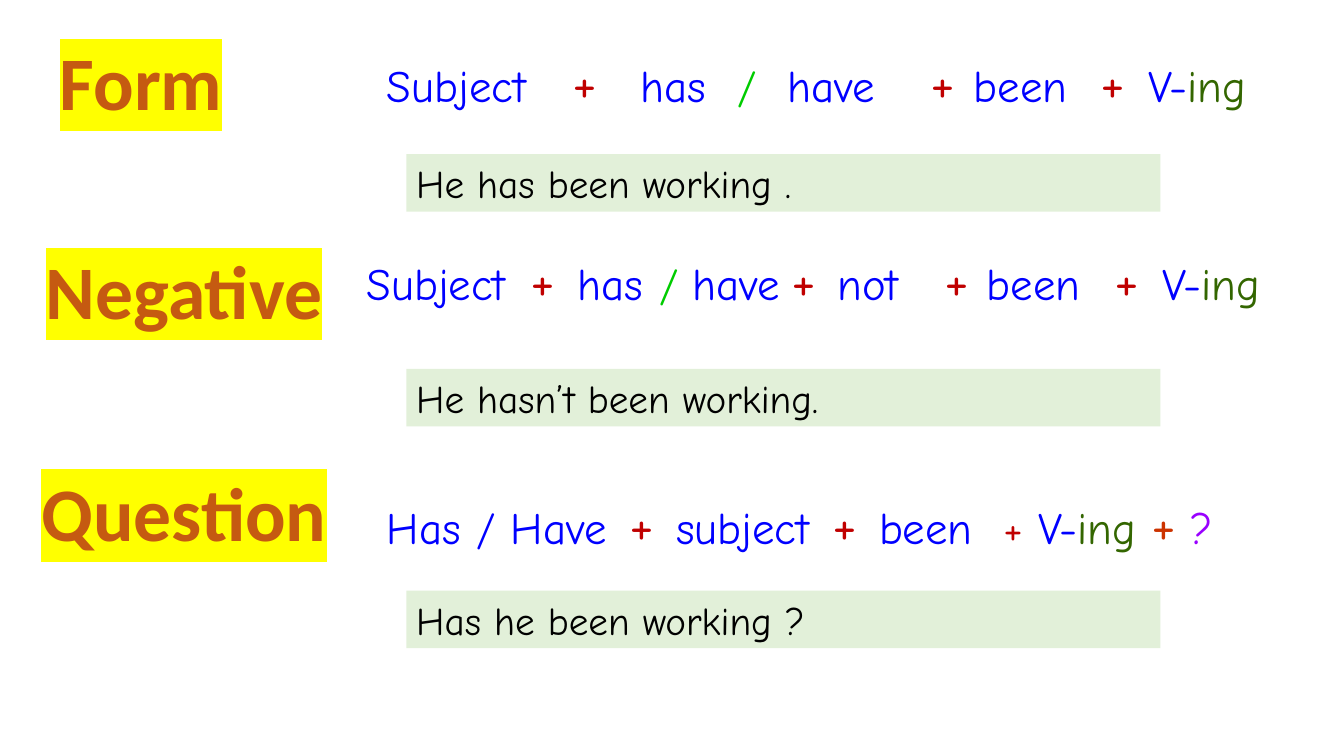
from lxml import etree
from pptx import Presentation
from pptx.dml.color import RGBColor
from pptx.enum.shapes import MSO_SHAPE
from pptx.enum.text import MSO_ANCHOR, MSO_AUTO_SIZE, PP_ALIGN
from pptx.oxml.ns import qn
from pptx.util import Inches, Pt

RECTANGLE = MSO_SHAPE.RECTANGLE
MIDDLE = MSO_ANCHOR.MIDDLE
FIT_SHAPE = MSO_AUTO_SIZE.SHAPE_TO_FIT_TEXT
LEFT, CENTER = PP_ALIGN.LEFT, PP_ALIGN.CENTER

BLUE = RGBColor(0x00, 0x00, 0xFF)
RED = RGBColor(0xC0, 0x00, 0x00)
BRICK = RGBColor(0xCC, 0x33, 0x00)
LIME = RGBColor(0x00, 0xCC, 0x00)
GREEN = RGBColor(0x33, 0x66, 0x00)
PURPLE = RGBColor(0x99, 0x00, 0xFF)
ORANGE = RGBColor(0xC5, 0x5A, 0x11)
PALE_GREEN = RGBColor(0xE2, 0xF0, 0xD9)
BLACK = RGBColor(0x00, 0x00, 0x00)
YELLOW = RGBColor(0xFF, 0xFF, 0x00)
WHITE = RGBColor(0xFF, 0xFF, 0xFF)

HEADING_FONT, BODY_FONT = "Calibri", "Comic Neue"
TEXT_INSET = 0.1

# Formula parts: (text, colour, size)
PLUS = ("+", RED, 40)
SMALL_PLUS = ("+", RED, 32)
LAST_PLUS = ("+", BRICK, 40)
SLASH = ("/", LIME, 32)
MARK = ("?", PURPLE, 32)
VERB = ("V-", BLUE, 32)
ENDING = ("ing", GREEN, 32)


def word(text):
    return (text, BLUE, 32)


# Each formula: box (left, top, width), then (slide position, part)
FORM = ((3.65, 0.41, 9.46), [
    (3.84, word("Subject")), (5.68, PLUS), (6.35, word("has")),
    (7.32, SLASH), (7.81, word("have")), (9.23, PLUS),
    (9.66, word("been")), (10.92, PLUS), (11.39, VERB)])
NEGATIVE = ((3.46, 2.38, 9.66), [
    (3.64, word("Subject")), (5.26, PLUS), (5.73, word("has")),
    (6.54, SLASH), (6.87, word("have")), (7.85, PLUS),
    (8.31, word("not")), (9.37, PLUS), (9.79, word("been")),
    (11.06, PLUS), (11.53, VERB)])
QUESTION = ((3.65, 4.8, 9.16), [
    (3.84, word("Has / Have")), (6.25, PLUS), (6.71, word("subject")),
    (8.26, PLUS), (8.72, word("been")), (9.95, SMALL_PLUS),
    (10.3, VERB), (11.42, LAST_PLUS), (11.81, MARK)])


def add_text_box(page, left, top, width, height):
    box = page.shapes.add_textbox(
        Inches(left), Inches(top), Inches(width), Inches(height))
    box.text_frame.word_wrap = True
    box.text_frame.auto_size = FIT_SHAPE
    return box.text_frame.paragraphs[0]


def add_colour(parent, colour):
    etree.SubElement(parent, qn("a:srgbClr"), val=str(colour))


def add_heading(page, text, left, top, width):
    para = add_text_box(page, left, top, width, 1.01)
    para.alignment = CENTER
    para.font.name = HEADING_FONT
    para.font.size = Pt(54)
    para.font.bold = True
    span = para.add_run()
    span.text = text
    span.font.color.rgb = ORANGE
    # White outline before the fill, yellow highlight after it
    properties = span.font.fill._xPr
    outline = etree.Element(qn("a:ln"), w=str(Pt(0.75)))
    add_colour(etree.SubElement(outline, qn("a:solidFill")), WHITE)
    properties.insert(0, outline)
    highlight = etree.SubElement(properties, qn("a:highlight"))
    add_colour(highlight, YELLOW)


def add_span(para, text, colour, size):
    span = para.add_run()
    span.text = text
    span.font.color.rgb = colour
    span.font.size = Pt(size)


def add_formula(page, formula):
    (left, top, width), parts = formula
    para = add_text_box(page, left, top, width, 0.77)
    para.font.name = BODY_FONT
    # One tab stop for each part
    tabs = etree.Element(qn("a:tabLst"))
    para._p.get_or_add_pPr().insert(0, tabs)
    for position, part in parts:
        offset = Inches(position - left - TEXT_INSET)
        etree.SubElement(tabs, qn("a:tab"), pos=str(offset), algn="l")
        text, colour, size = part
        add_span(para, "\t" + text, colour, size)
        if part == VERB:
            add_span(para, *ENDING)


def add_example(page, text, top):
    bar = page.shapes.add_shape(
        RECTANGLE, Inches(4.03), Inches(top), Inches(7.48), Inches(0.57))
    bar.shadow.inherit = False
    bar.fill.solid()
    bar.fill.fore_color.rgb = PALE_GREEN
    bar.line.fill.background()
    frame = bar.text_frame
    frame.word_wrap = True
    frame.auto_size = FIT_SHAPE
    frame.vertical_anchor = MIDDLE
    para = frame.paragraphs[0]
    para.text = text
    para.alignment = LEFT
    para.font.name = BODY_FONT
    para.font.size = Pt(28)
    para.font.color.rgb = BLACK


def main():
    deck = Presentation()
    deck.slide_width, deck.slide_height = Inches(13.33), Inches(7.5)
    page = deck.slides.add_slide(deck.slide_layouts[6])

    # Headings
    add_heading(page, "Form", -0.17, 0.3, 3.14)
    add_heading(page, "Negative", 0, 2.37, 3.65)
    add_heading(page, "Question", 0, 4.57, 3.65)

    # Sentence patterns
    for formula in (FORM, NEGATIVE, QUESTION):
        add_formula(page, formula)

    # Example sentences
    add_example(page, "He has been working .", 1.53)
    add_example(page, "He hasn’t been working.", 3.66)
    add_example(page, "Has he been working ?", 5.86)

    deck.save("out.pptx")


if __name__ == "__main__":
    main()
